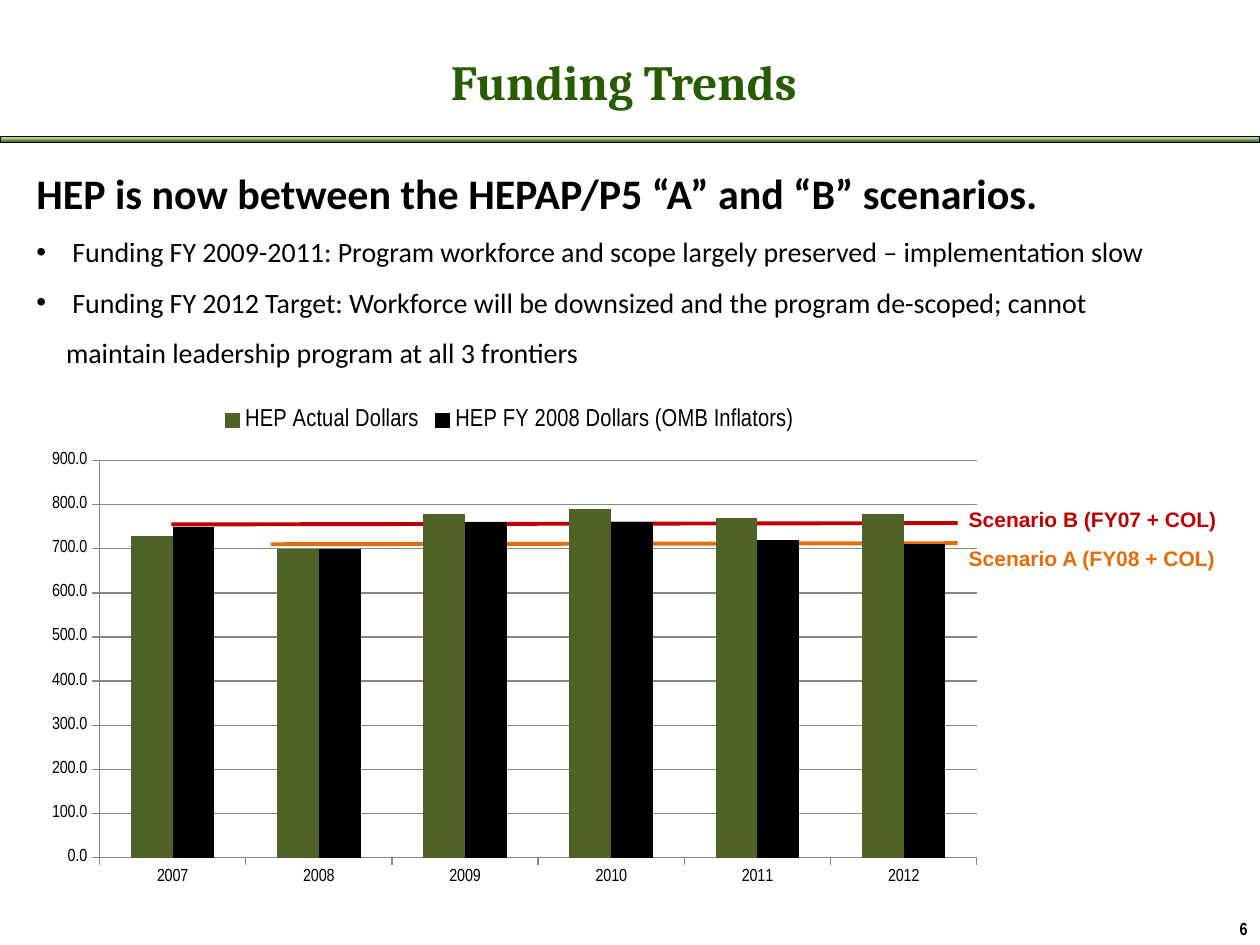
"""Build the Funding Trends slide: title, summary bullets and a budget column chart."""
from dataclasses import dataclass

import lxml.etree
import pptx
import pptx.chart.data
import pptx.dml.color
import pptx.enum.chart
import pptx.enum.shapes
import pptx.enum.text
import pptx.oxml
import pptx.oxml.ns
import pptx.util

Pt = pptx.util.Pt
qn = pptx.oxml.ns.qn
ALIGN = pptx.enum.text.PP_ALIGN


@dataclass(frozen=True)
class Theme:
    black: str = "000000"
    title: str = "285C00"
    scenario_a: str = "E46C0A"
    scenario_b: str = "C00000"
    actual: str = "4F6228"
    axis: str = "868686"
    band: tuple = ("DDEBCF", "9CB86E", "156B13")
    title_size: float = 28
    heading_size: float = 24
    bullet_size: float = 16
    legend_size: float = 14
    label_size: float = 12
    small_size: float = 10


@dataclass(frozen=True)
class Style:
    font: str
    size: float
    color: str
    bold: bool = True


@dataclass(frozen=True)
class Box:
    left: float
    top: float
    width: float
    height: float

    def emu(self) -> tuple:
        return tuple(Pt(v) for v in (self.left, self.top, self.width, self.height))


@dataclass(frozen=True)
class Scenario:
    label: str
    color: str
    start: tuple
    end: tuple
    box: Box


THEME = Theme()
NARROW = "Arial Narrow"
SCENARIOS = (
    Scenario("Scenario A (FY08 + COL)", THEME.scenario_a, (154.8, 311), (547.2, 310.4),
             Box(546.5, 308.2, 160.5, 21.8)),
    Scenario("Scenario B (FY07 + COL)", THEME.scenario_b, (97.9, 299.7), (547.2, 298.9),
             Box(546.5, 285.8, 158.5, 21.8)),
)
HEADING = "HEP is now between the HEPAP/P5 “A” and “B” scenarios."
BULLETS = (
    " Funding FY 2009-2011: Program workforce and scope largely preserved – implementation slow",
    " Funding FY 2012 Target: Workforce will be downsized and the program de-scoped; "
    "cannot maintain leadership program at all 3 frontiers",
)
YEARS = ("2007", "2008", "2009", "2010", "2011", "2012")
SERIES = (
    ("HEP Actual Dollars", THEME.actual, (730, 700, 780, 790, 770, 780)),
    ("HEP FY 2008 Dollars (OMB Inflators)", THEME.black, (750, 700, 760, 760, 720, 710)),
)


def rgb(color: str) -> pptx.dml.color.RGBColor:
    return pptx.dml.color.RGBColor.from_string(color)


def set_font(font, style: Style) -> None:
    font.name, font.size, font.bold = style.font, Pt(style.size), style.bold
    font.color.rgb = rgb(style.color)


def add_run(p, text: str, style: Style) -> None:
    r = p.add_run()
    r.text = text
    set_font(r.font, style)


def add_text(s, box: Box, text: str, style: Style, align=ALIGN.LEFT, wrap: bool = False):
    tf = s.shapes.add_textbox(*box.emu()).text_frame
    tf.word_wrap = wrap
    p = tf.paragraphs[0]
    p.alignment = align
    add_run(p, text, style)
    return tf


def add_bullet(tf, text: str, style: Style) -> None:
    p = tf.add_paragraph()
    p.line_spacing = 1.5
    pPr = p._p.get_or_add_pPr()
    pPr.set("marL", str(Pt(17)))
    pPr.set("indent", str(-Pt(17)))
    lxml.etree.SubElement(pPr, qn("a:buFont")).set("typeface", "Arial")
    lxml.etree.SubElement(pPr, qn("a:buChar")).set("char", "•")
    add_run(p, text, style)


def add_band(s, box: Box) -> None:
    sp = s.shapes.add_shape(pptx.enum.shapes.MSO_SHAPE.RECTANGLE, *box.emu())
    sp.shadow.inherit = False
    stops = "".join(f'<a:gs pos="{i * 50000}"><a:srgbClr val="{c}"/></a:gs>'
                    for i, c in enumerate(THEME.band))
    ns = pptx.oxml.ns.nsdecls("a")
    fill = pptx.oxml.parse_xml(f'<a:gradFill {ns} rotWithShape="1"><a:gsLst>{stops}</a:gsLst>'
                               '<a:lin ang="5400000" scaled="0"/></a:gradFill>')
    sp._element.spPr.find(qn("a:prstGeom")).addnext(fill)
    sp.line.color.rgb = rgb(THEME.black)
    sp.line.width = Pt(0.5)


def add_scenario(s, item: Scenario) -> None:
    line = s.shapes.add_connector(pptx.enum.shapes.MSO_CONNECTOR.STRAIGHT,
                                  *(Pt(v) for v in item.start + item.end))
    line.line.color.rgb = rgb(item.color)
    line.line.width = Pt(2.25)
    lxml.etree.SubElement(line._element.spPr, qn("a:effectLst"))
    add_text(s, item.box, item.label, Style("Arial", THEME.label_size, item.color))


def clear_and_place(chart, x: float, y: float, w: float, h: float) -> None:
    ns = pptx.oxml.ns.nsdecls("c", "a")
    no_fill = f"<c:spPr {ns}><a:noFill/><a:ln><a:noFill/></a:ln></c:spPr>"
    root = chart._chartSpace
    root.find(qn("c:chart")).addnext(pptx.oxml.parse_xml(no_fill))
    area = root.find(f"{qn('c:chart')}/{qn('c:plotArea')}")
    area.append(pptx.oxml.parse_xml(no_fill))
    for old in area.findall(qn("c:layout")):
        area.remove(old)
    places = "".join(f'<c:{tag} val="{val}"/>' for tag, val in (
        ("layoutTarget", "inner"), ("xMode", "edge"), ("yMode", "edge"),
        ("x", x), ("y", y), ("w", w), ("h", h)))
    area.insert(0, pptx.oxml.parse_xml(
        f"<c:layout {ns}><c:manualLayout>{places}</c:manualLayout></c:layout>"))


def add_funding_chart(s, box: Box) -> None:
    xl = pptx.enum.chart
    data = pptx.chart.data.CategoryChartData(number_format="0.0")
    data.categories = YEARS
    for name, _, values in SERIES:
        data.add_series(name, values)
    chart = s.shapes.add_chart(xl.XL_CHART_TYPE.COLUMN_CLUSTERED, *box.emu(), data).chart
    set_font(chart.font, Style(NARROW, THEME.small_size, THEME.black, False))
    chart.has_title = False
    chart.has_legend = True
    chart.legend.position = xl.XL_LEGEND_POSITION.TOP
    chart.legend.include_in_layout = False
    set_font(chart.legend.font, Style(NARROW, THEME.legend_size, THEME.black, False))
    plot = chart.plots[0]
    plot.gap_width, plot.overlap, plot.vary_by_categories = 150, 0, False
    for series, (_, color, _) in zip(plot.series, SERIES):
        series.format.fill.solid()
        series.format.fill.fore_color.rgb = rgb(color)
    values = chart.value_axis
    values.minimum_scale, values.maximum_scale, values.major_unit = 0, 900, 100
    values.has_major_gridlines = True
    values.tick_labels.number_format = "0.0"
    values.tick_labels.number_format_is_linked = False
    for axis in (values, chart.category_axis):
        axis.major_tick_mark = xl.XL_TICK_MARK.OUTSIDE
        axis.minor_tick_mark = xl.XL_TICK_MARK.NONE
    for part in (values, chart.category_axis, values.major_gridlines):
        part.format.line.color.rgb = rgb(THEME.axis)
        part.format.line.width = Pt(0.75)
    clear_and_place(chart, 0.07, 0.13, 0.92, 0.78)


def main() -> None:
    prs = pptx.Presentation()
    prs.slide_width, prs.slide_height = Pt(720), Pt(540)
    s = prs.slides.add_slide(prs.slide_layouts[6])
    add_band(s, Box(0, 77.8, 720, 3.4))
    add_text(s, Box(690.5, 521.3, 29.5, 18.7), "6",
             Style(NARROW, THEME.small_size, THEME.black), ALIGN.RIGHT, True)
    for item in SCENARIOS:
        add_scenario(s, item)
    add_text(s, Box(250.6, 25.9, 218.9, 41), "Funding Trends",
             Style("Cambria", THEME.title_size, THEME.title))
    tf = add_text(s, Box(13.7, 92.2, 651.6, 145.4), HEADING,
                  Style("Calibri", THEME.heading_size, THEME.black), wrap=True)
    for text in BULLETS:
        add_bullet(tf, text, Style("Calibri", THEME.bullet_size, THEME.black, False))
    add_funding_chart(s, Box(18.7, 225.4, 545, 290.9))
    prs.save("out.pptx")


if __name__ == "__main__":
    main()
